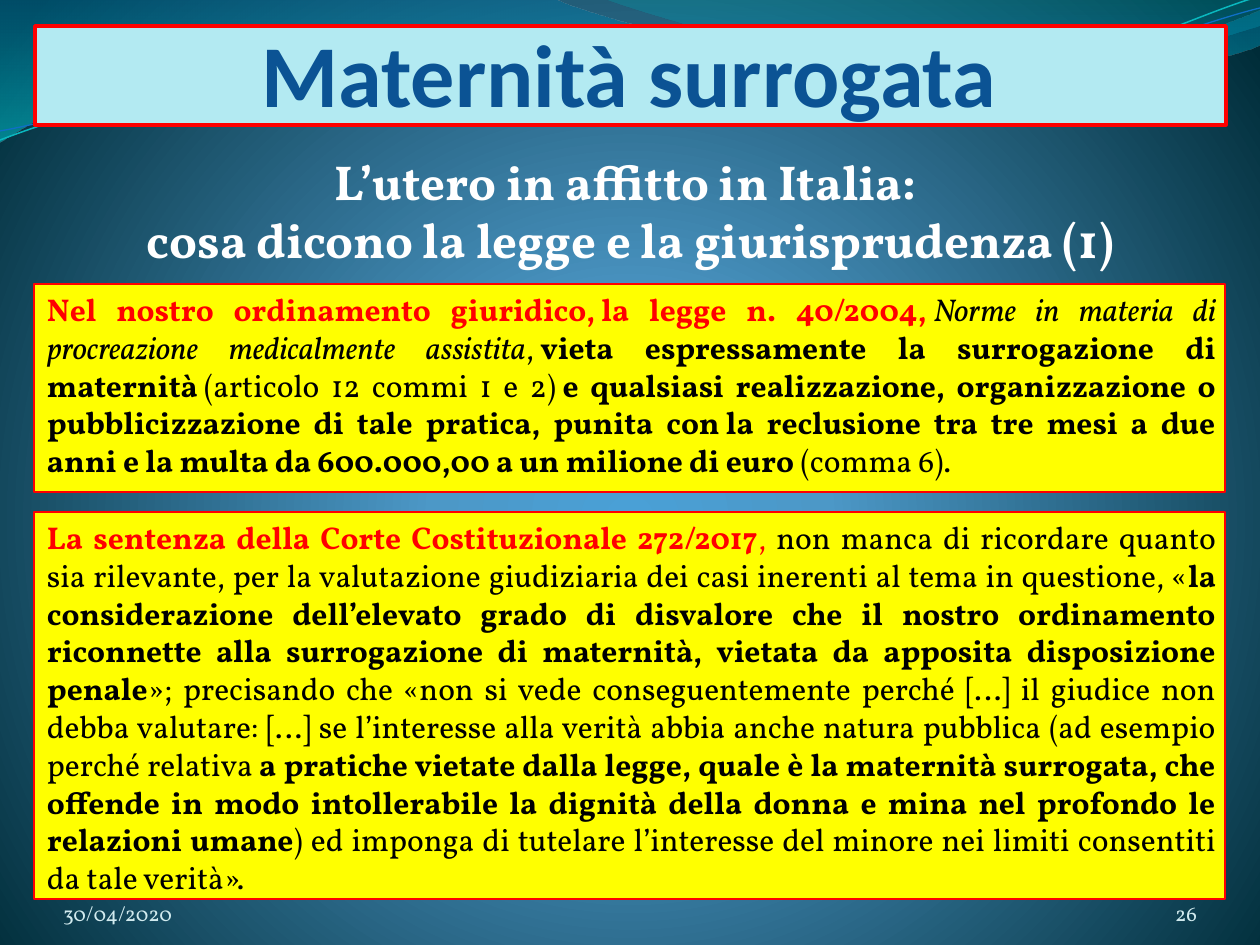
from lxml.etree import SubElement
from pptx import Presentation
from pptx.dml.color import RGBColor
from pptx.enum.shapes import MSO_SHAPE
from pptx.enum.text import MSO_ANCHOR, PP_ALIGN
from pptx.oxml.ns import qn
from pptx.util import Emu, Pt

PX = 914400 / 126
NBSP = chr(160)  # no-break space
COLORS = {
    "white": "FFFFFF", "black": "000000", "red": "FF0000", "yellow": "FFFF00",
    "title": "0B5394", "title_fill": "B3EAF2", "footer": "D1EAEE",
    "glow": "4AA0D6", "mid": "4C98C7", "deep": "002C38",
    "wave_blue": "0074A1", "wave_cyan": "00C6CF",
    "crest_teal": "00A1A9", "crest_blue": "008BBF",
    "line_teal": "0AB8BF", "line_blue": "0F6FC6",
}


def rgb(name):
    return RGBColor.from_string(COLORS[name])


def set_gradient(fill, parent, stops, focus=None):
    """Replace a fill by a gradient of (position %, colour, opacity %) stops."""
    fill.solid()
    solid = parent.find(qn("a:solidFill"))
    gradient = solid.makeelement(qn("a:gradFill"), {"rotWithShape": "1"})
    stop_list = SubElement(gradient, qn("a:gsLst"))
    for position, color, opacity in stops:
        stop = SubElement(stop_list, qn("a:gs"), pos=str(position * 1000))
        tint = SubElement(stop, qn("a:srgbClr"), val=COLORS[color])
        if opacity < 100:
            SubElement(tint, qn("a:alpha"), val=str(opacity * 1000))
    if focus:
        circle = SubElement(gradient, qn("a:path"), {"path": "circle"})
        SubElement(circle, qn("a:fillToRect"),
                   {side: str(share * 1000) for side, share in focus.items()})
    else:
        SubElement(gradient, qn("a:lin"), ang="5400000", scaled="1")
    parent.replace(solid, gradient)


prs = Presentation()
prs.slide_width, prs.slide_height = Emu(round(1260 * PX)), Emu(round(945 * PX))
slide = prs.slides.add_slide(prs.slide_layouts[6])

# Background glow
background_fill = slide.background.fill
background_fill.solid()
set_gradient(background_fill, slide.element.find(".//" + qn("p:bgPr")),
             [(0, "glow", 100), (25, "mid", 100), (100, "deep", 100)],
             {"l": 10, "t": 110, "r": 10, "b": 100})

# Waves at the top: two numbers are a straight step, six are a Bezier curve
waves = [
    {"route": [(0, 0), (554, -1), (600, 21, 837, 79, 955, 79),
               (1074, 79, 1207, 33, 1260, 11), (1261, 45),
               (1239, 55, 1096, 96, 940, 95), (784, 95, 481, 35, 324, 43),
               (163, 45, 58, 105, -1, 142), (0, 0)],
     "stops": [(0, "wave_blue", 45), (100, "wave_cyan", 55)]},
    {"route": [(604, -1), (641, 14, 859, 78, 969, 82),
               (1079, 87, 1211, 40, 1260, 26), (1260, 0), (604, -1)],
     "stops": [(0, "crest_teal", 30), (80, "crest_blue", 45)]},
    {"route": [(0, 140), (60, 117, 199, 72, 349, 66),
               (498, 59, 747, 112, 898, 101), (1050, 89, 1182, 19, 1257, -3)],
     "line": ("line_teal", 0.85)},
    {"route": [(0, 131), (59, 121, 207, 77, 357, 71),
               (508, 64, 752, 106, 903, 95), (1053, 84, 1186, 26, 1260, 8)],
     "line": ("line_blue", 0.75)},
]
for wave in waves:
    start, *pieces = wave["route"]
    points = [piece[i:i + 2] for piece in pieces for i in range(0, len(piece), 2)]
    outline = slide.shapes.build_freeform(*start, scale=PX)
    outline.add_line_segments(points, close="stops" in wave)
    ribbon = outline.convert_to_shape()
    ribbon.shadow.inherit = False
    # Each run of three steps that belongs to a curve becomes one Bezier
    steps = iter(ribbon.element.findall(".//" + qn("a:lnTo")))
    for piece in pieces:
        first = next(steps)
        if len(piece) == 6:
            first.tag = qn("a:cubicBezTo")
            for step in (next(steps), next(steps)):
                first.append(step[0])
                step.getparent().remove(step)
    if "stops" in wave:
        set_gradient(ribbon.fill, ribbon.element.spPr, wave["stops"])
        ribbon.line.fill.background()
    else:
        color, width = wave["line"]
        ribbon.fill.background()
        ribbon.line.color.rgb = rgb(color)
        ribbon.line.width = Pt(width)

# Text formats
BODY = {"name": "Vollkorn", "size": Pt(18)}
PLAIN = ("black", BODY)
BOLD = ("black", BODY | {"bold": True})
ITALIC = ("black", BODY | {"italic": True})
RED = ("red", BODY)
RED_BOLD = ("red", BODY | {"bold": True})
TITLE = ("title", {"name": "Calibri", "size": Pt(50.4), "bold": True})
HEADING = ("white", {"name": "Vollkorn", "size": Pt(28), "bold": True})
FOOTER = ("footer", {"name": "Vollkorn", "size": Pt(12)})
CENTER, JUSTIFY = {"alignment": PP_ALIGN.CENTER}, {
    "alignment": PP_ALIGN.JUSTIFY, "space_before": Pt(3.6)}
TOP, BOTTOM = MSO_ANCHOR.TOP, MSO_ANCHOR.BOTTOM

# Content: box in px, (fill, line, width), anchor, insets, indent, paragraphs
blocks = [
    ((35, 26, 1191, 99), ("title_fill", "red", 2), BOTTOM, (0, 0, 3, 0), 0, CENTER,
     [[("Maternità surrogata", TITLE)]]),
    ((34, 284, 1191, 208), ("yellow", "red", 0.75), TOP, (0, 6, 9, 6), 13, JUSTIFY,
     [[(f"Nel nostro ordinamento giuridico,{NBSP}la legge n. 40/2004,{NBSP}", RED_BOLD),
       ("Norme in materia di procreazione medicalmente assistita", ITALIC),
       (f",{NBSP}", PLAIN),
       (f"vieta espressamente la surrogazione di maternità{NBSP}", BOLD),
       (f"(articolo 12 commi 1 e 2){NBSP}", PLAIN),
       ("e qualsiasi realizzazione, organizzazione o pubblicizzazione di tale "
        f"pratica, punita con{NBSP}la reclusione tra tre mesi a due anni e la multa "
        f"da{NBSP}600.000,00 a un milione di euro", BOLD),
       (f"{NBSP}(comma 6).", PLAIN)]]),
    ((63, 876, 294, 50), None, BOTTOM, (0, 0, 0, 0), 0,
     {"alignment": PP_ALIGN.LEFT}, [[("30/04/2020", FOOTER)]]),
    ((1092, 876, 105, 50), None, BOTTOM, (0, 0, 0, 0), 0,
     {"alignment": PP_ALIGN.RIGHT}, [[("26", FOOTER)]]),
    ((35, 145, 1191, 131), None, TOP, (13, 6, 13, 6), 0, CENTER,
     [[("L’utero in affitto in Italia: ", HEADING)],
      [("cosa dicono la legge e la giurisprudenza (1)", HEADING)]]),
    ((34, 512, 1191, 387), ("yellow", "red", 0.75), TOP, (0, 6, 9, 6), 13, JUSTIFY,
     [[("La sentenza della Corte Costituzionale 272/2017", RED_BOLD),
       (", ", RED),
       ("non manca di ricordare quanto sia rilevante, per la valutazione giudiziaria "
        "dei casi inerenti al tema in questione, «", PLAIN),
       ("la considerazione dell’elevato grado di disvalore che il nostro ordinamento "
        "riconnette alla surrogazione di maternità, vietata da apposita disposizione "
        "penale", BOLD),
       ("»; precisando che «non si vede conseguentemente perché […] il giudice non "
        "debba valutare: […] se l’interesse alla verità abbia anche natura pubblica "
        f"(ad esempio perché relativa{NBSP}", PLAIN),
       ("a pratiche vietate dalla legge, quale è la maternità surrogata, che offende "
        "in modo intollerabile la dignità della donna e mina nel profondo le "
        "relazioni umane", BOLD),
       (") ed imponga di tutelare l’interesse del minore nei limiti consentiti da "
        "tale verità».", PLAIN)]]),
]
for box, panel, anchor, insets, indent, layout, paragraphs in blocks:
    place = [Emu(round(length * PX)) for length in box]
    if panel:
        fill, line, width = panel
        block = slide.shapes.add_shape(MSO_SHAPE.RECTANGLE, *place)
        block.shadow.inherit = False
        block.fill.solid()
        block.fill.fore_color.rgb = rgb(fill)
        block.line.color.rgb = rgb(line)
        block.line.width = Pt(width)
    else:
        block = slide.shapes.add_textbox(*place)
    frame = block.text_frame
    frame.word_wrap = True
    frame.vertical_anchor = anchor
    for side, inset in zip(("left", "top", "right", "bottom"), insets):
        setattr(frame, f"margin_{side}", Emu(round(inset * PX)))
    for index, pieces in enumerate(paragraphs):
        paragraph = frame.add_paragraph() if index else frame.paragraphs[0]
        for key, value in layout.items():
            setattr(paragraph, key, value)
        if indent:
            paragraph._p.get_or_add_pPr().set("marL", str(round(indent * PX)))
        for wording, (color, style) in pieces:
            run = paragraph.add_run()
            run.text = wording
            run.font.color.rgb = rgb(color)
            for key, value in style.items():
                setattr(run.font, key, value)

prs.save("out.pptx")
